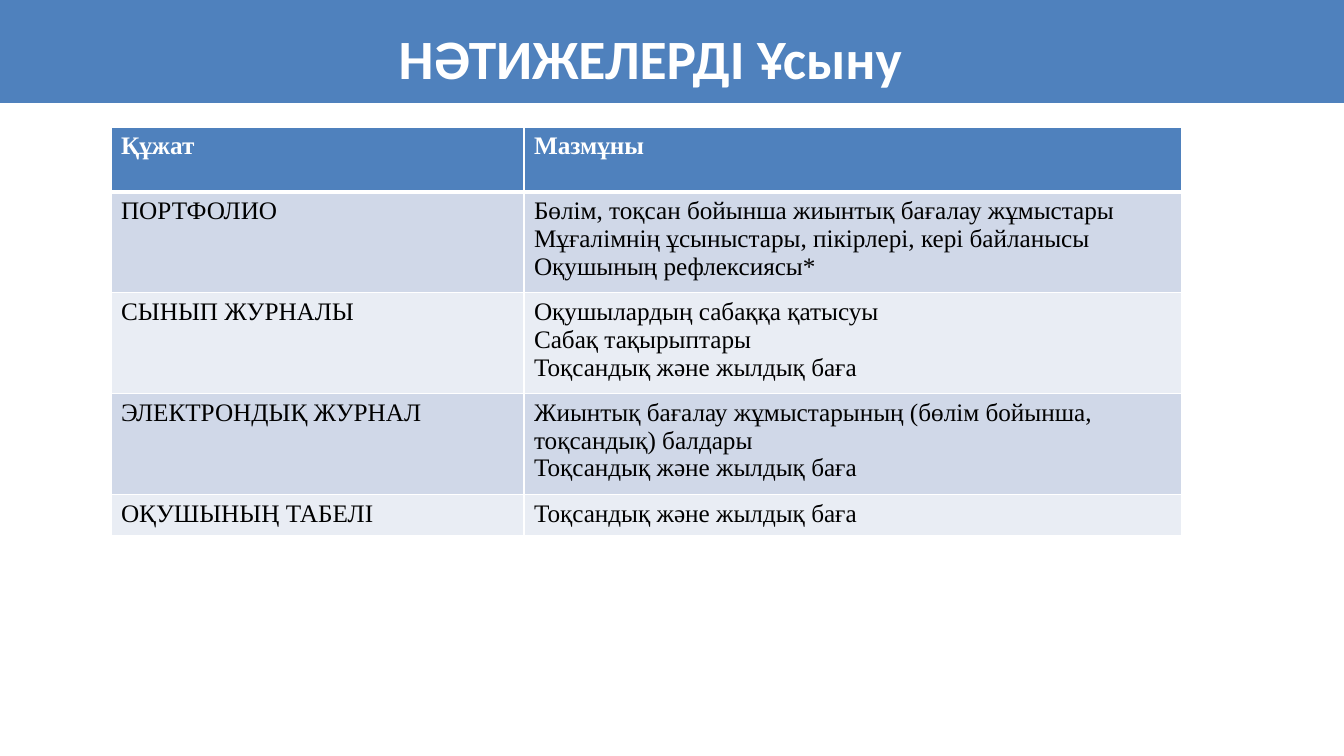
from dataclasses import dataclass

from lxml import etree
from pptx import Presentation
from pptx.dml.color import RGBColor
from pptx.enum.shapes import MSO_SHAPE
from pptx.enum.text import MSO_ANCHOR, PP_ALIGN
from pptx.oxml.ns import qn
from pptx.util import Emu, Pt

RECTANGLE = MSO_SHAPE.RECTANGLE
MIDDLE = MSO_ANCHOR.MIDDLE
CENTER = PP_ALIGN.CENTER
LEFT = PP_ALIGN.LEFT
EMU_PER_PX = 914400 / 100.8


@dataclass(frozen=True)
class Theme:
    blue: RGBColor = RGBColor(0x4F, 0x81, 0xBD)
    white: RGBColor = RGBColor(0xFF, 0xFF, 0xFF)
    black: RGBColor = RGBColor(0, 0, 0)
    bands: tuple = (RGBColor(0xD0, 0xD8, 0xE8), RGBColor(0xE9, 0xED, 0xF4))
    title_font: str = "Calibri"
    table_font: str = "Times New Roman"
    title_size: float = 39.6
    table_size: float = 18


THEME = Theme()
TITLE_FORMAT = {"name": THEME.title_font, "size": Pt(THEME.title_size), "bold": True}
TABLE_FORMAT = {"name": THEME.table_font, "size": Pt(THEME.table_size)}

COLUMN_WIDTHS = (413, 658)
ROW_HEIGHTS = (65, 94, 94, 94, 41)
DOCUMENTS = (
    ("Құжат", ("Мазмұны",)),
    ("ПОРТФОЛИО", (
        "Бөлім, тоқсан бойынша жиынтық бағалау жұмыстары",
        "Мұғалімнің ұсыныстары, пікірлері, кері байланысы",
        "Оқушының рефлексиясы*",
    )),
    ("СЫНЫП ЖУРНАЛЫ", (
        "Оқушылардың сабаққа қатысуы",
        "Сабақ тақырыптары",
        "Тоқсандық және жылдық баға",
    )),
    ("ЭЛЕКТРОНДЫҚ ЖУРНАЛ", (
        "Жиынтық бағалау жұмыстарының (бөлім бойынша, тоқсандық) балдары",
        "Тоқсандық және жылдық баға",
    )),
    ("ОҚУШЫНЫҢ ТАБЕЛІ", ("Тоқсандық және жылдық баға",)),
)


def px(length):
    return Emu(round(length * EMU_PER_PX))


def write_lines(text_frame, lines, color, font_format, alignment):
    text_frame.word_wrap = True
    text_frame.text = "\n".join(lines)
    for paragraph in text_frame.paragraphs:
        paragraph.alignment = alignment
        for name, value in font_format.items():
            setattr(paragraph.font, name, value)
        paragraph.font.color.rgb = color


def add_banner(slide, width, height):
    banner = slide.shapes.add_shape(RECTANGLE, 0, 0, px(width), px(height))
    banner.shadow.inherit = False
    banner.fill.solid()
    banner.fill.fore_color.rgb = THEME.blue
    banner.line.fill.background()


def add_title(slide, text, left, top, width, height):
    title = slide.shapes.add_textbox(px(left), px(top), px(width), px(height))
    title.text_frame.vertical_anchor = MIDDLE
    write_lines(title.text_frame, [text], THEME.white, TITLE_FORMAT, CENTER)


def set_borders(cell, bottom_width, top_width):
    """Put white borders, with widths in points, ahead of the cell's fill."""
    properties = cell._tc.get_or_add_tcPr()
    widths = {"a:lnL": 1, "a:lnR": 1, "a:lnT": top_width, "a:lnB": bottom_width}
    for position, (tag, width) in enumerate(widths.items()):
        line = etree.Element(qn(tag), w=str(Pt(width)))
        fill = etree.SubElement(line, qn("a:solidFill"))
        etree.SubElement(fill, qn("a:srgbClr"), val=str(THEME.white))
        properties.insert(position, line)


def add_document_table(slide, left, top):
    frame = slide.shapes.add_table(
        len(DOCUMENTS), len(COLUMN_WIDTHS), px(left), px(top),
        px(sum(COLUMN_WIDTHS)), px(sum(ROW_HEIGHTS)))
    table = frame.table
    for column, width in zip(table.columns, COLUMN_WIDTHS):
        column.width = px(width)
    for row, height in zip(table.rows, ROW_HEIGHTS):
        row.height = px(height)
    for row_index, (document, contents) in enumerate(DOCUMENTS):
        is_header = row_index == 0
        fill = THEME.blue if is_header else THEME.bands[(row_index - 1) % 2]
        color = THEME.white if is_header else THEME.black
        font_format = {**TABLE_FORMAT, "bold": is_header}
        for column_index, lines in enumerate(([document], contents)):
            cell = table.cell(row_index, column_index)
            cell.fill.solid()
            cell.fill.fore_color.rgb = fill
            set_borders(cell, 3 if is_header else 1, 3 if row_index == 1 else 1)
            write_lines(cell.text_frame, lines, color, font_format, LEFT)


def main():
    presentation = Presentation()
    presentation.slide_width = px(1344)
    presentation.slide_height = px(756)
    slide = presentation.slides.add_slide(presentation.slide_layouts[6])
    add_banner(slide, 1344, 103)
    add_title(slide, "НӘТИЖЕЛЕРДІ Ұсыну", 115, 23, 1071, 68)
    add_document_table(slide, 111, 127)
    presentation.save("out.pptx")


if __name__ == "__main__":
    main()
